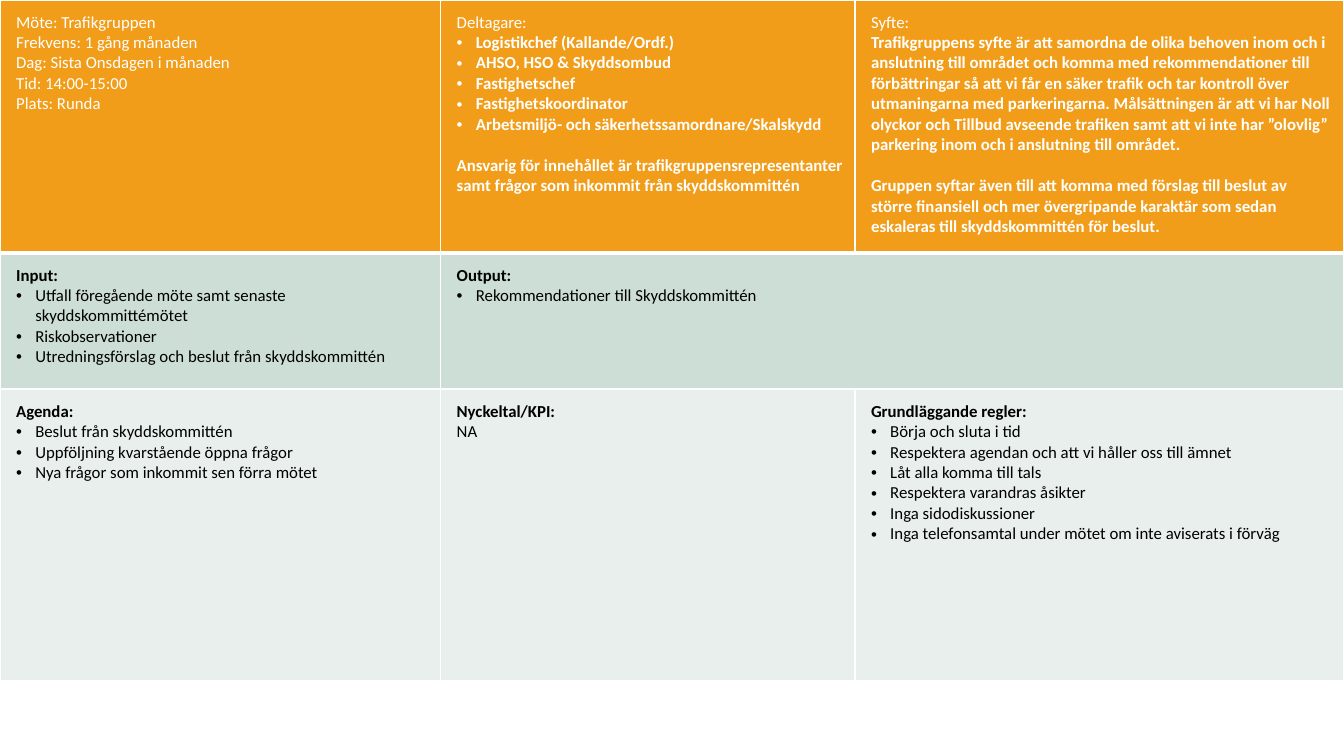
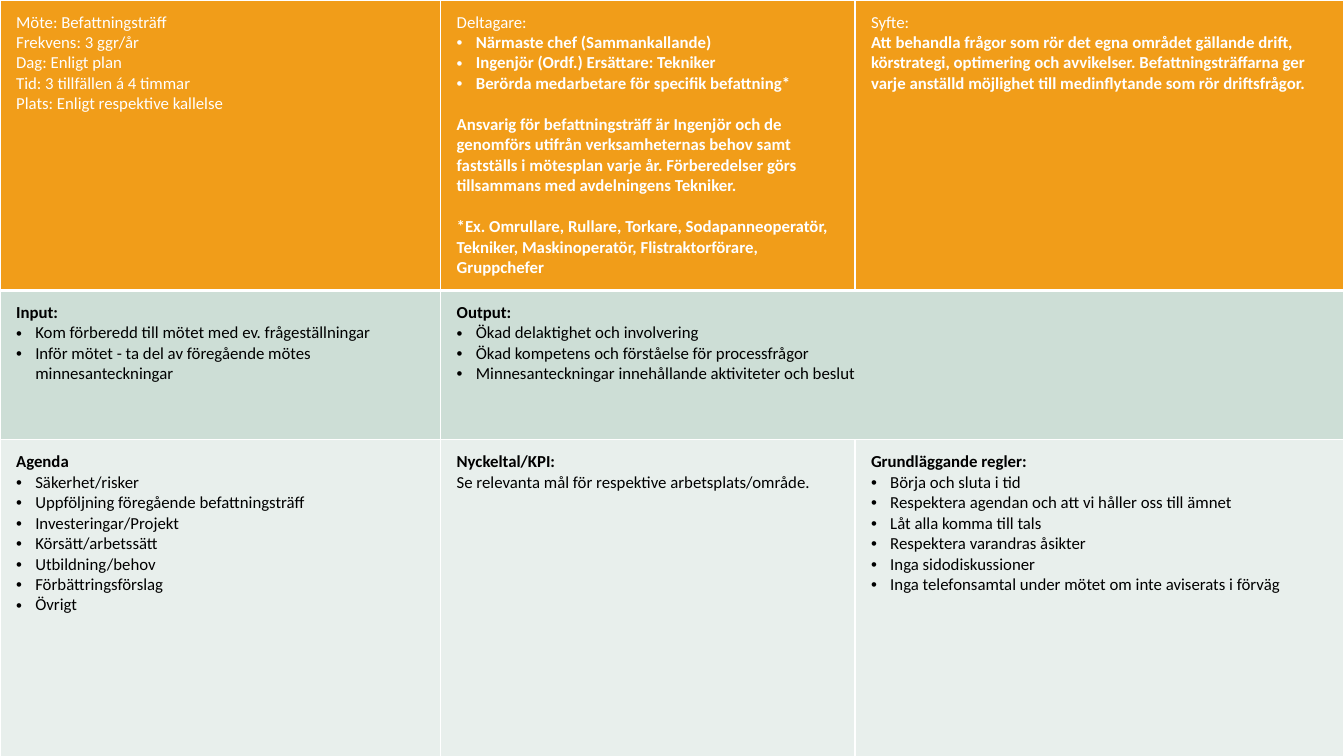
from dataclasses import dataclass

from lxml.etree import SubElement
from pptx import Presentation
from pptx.dml.color import RGBColor
from pptx.oxml.ns import qn
from pptx.util import Inches, Pt


@dataclass(frozen=True)
class Theme:
    font: str = "Calibri"
    size: float = 12
    gap: float = 14.65  # one line of body text
    light: str = "FFFFFF"
    dark: str = "000000"
    row_fills: tuple = ("F19D19", "CDDED6", "E8EFEC")
    border: float = 1
    header_border: float = 3


@dataclass(frozen=True)
class Box:
    heading: str
    bullets: tuple = ()
    paragraphs: tuple = ()


theme = Theme()
COLUMN_WIDTHS = (4.37, 4.11, 4.85)
INDENT = Inches(0.19)

ground_rules = Box("Grundläggande regler:", bullets=(
    "Börja och sluta i tid",
    "Respektera agendan och att vi håller oss till ämnet",
    "Låt alla komma till tals",
    "Respektera varandras åsikter",
    "Inga sidodiskussioner",
    "Inga telefonsamtal under mötet om inte aviserats i förväg",
))

# Each meeting: row heights, then three rows of boxes
meetings = [
    ((2.51, 1.35, 2.89), (
        (
            Box("Möte: Trafikgruppen", paragraphs=(
                "Frekvens: 1 gång månaden",
                "Dag: Sista Onsdagen i månaden",
                "Tid: 14:00-15:00",
                "Plats: Runda",
            )),
            Box("Deltagare:", bullets=(
                "Logistikchef (Kallande/Ordf.)",
                "AHSO, HSO & Skyddsombud",
                "Fastighetschef",
                "Fastighetskoordinator",
                "Arbetsmiljö- och säkerhetssamordnare/Skalskydd",
            ), paragraphs=(
                "Ansvarig för innehållet är trafikgruppensrepresentanter samt "
                "frågor som inkommit från skyddskommittén",
            )),
            Box("Syfte:", paragraphs=(
                "Trafikgruppens syfte är att samordna de olika behoven inom och i "
                "anslutning till området och komma med rekommendationer till "
                "förbättringar så att vi får en säker trafik och tar kontroll över "
                "utmaningarna med parkeringarna. Målsättningen är att vi har Noll "
                "olyckor och Tillbud avseende trafiken samt att vi inte har "
                "”olovlig” parkering inom och i anslutning till området.",
                "Gruppen syftar även till att komma med förslag till beslut av "
                "större finansiell och mer övergripande karaktär som sedan "
                "eskaleras till skyddskommittén för beslut.",
            )),
        ),
        (
            Box("Input:", bullets=(
                "Utfall föregående möte samt senaste skyddskommittémötet",
                "Riskobservationer",
                "Utredningsförslag och beslut från skyddskommittén",
            )),
            Box("Output:", bullets=("Rekommendationer till Skyddskommittén",)),
        ),
        (
            Box("Agenda:", bullets=(
                "Beslut från skyddskommittén",
                "Uppföljning kvarstående öppna frågor",
                "Nya frågor som inkommit sen förra mötet",
            )),
            Box("Nyckeltal/KPI:", paragraphs=("NA",)),
            ground_rules,
        ),
    )),
    ((2.88, 1.48, 3.14), (
        (
            Box("Möte: Befattningsträff", paragraphs=(
                "Frekvens: 3 ggr/år",
                "Dag: Enligt plan",
                "Tid: 3 tillfällen á 4 timmar",
                "Plats: Enligt respektive kallelse",
            )),
            Box("Deltagare:", bullets=(
                "Närmaste chef (Sammankallande)",
                "Ingenjör (Ordf.) Ersättare: Tekniker",
                "Berörda medarbetare för specifik befattning*",
            ), paragraphs=(
                "Ansvarig för befattningsträff är Ingenjör och de genomförs "
                "utifrån verksamheternas behov samt fastställs i mötesplan varje "
                "år. Förberedelser görs tillsammans med avdelningens Tekniker.",
                "*Ex. Omrullare, Rullare, Torkare, Sodapanneoperatör, Tekniker, "
                "Maskinoperatör, Flistraktorförare, Gruppchefer",
            )),
            Box("Syfte:", paragraphs=(
                "Att behandla frågor som rör det egna området gällande drift, "
                "körstrategi, optimering och avvikelser. Befattningsträffarna ger "
                "varje anställd möjlighet till medinflytande som rör driftsfrågor.",
            )),
        ),
        (
            Box("Input:", bullets=(
                "Kom förberedd till mötet med ev. frågeställningar",
                "Inför mötet - ta del av föregående mötes minnesanteckningar",
            )),
            Box("Output:", bullets=(
                "Ökad delaktighet och involvering",
                "Ökad kompetens och förståelse för processfrågor",
                "Minnesanteckningar innehållande aktiviteter och beslut",
            )),
        ),
        (
            Box("Agenda", bullets=(
                "Säkerhet/risker",
                "Uppföljning föregående befattningsträff",
                "Investeringar/Projekt",
                "Körsätt/arbetssätt",
                "Utbildning/behov",
                "Förbättringsförslag",
                "Övrigt",
            )),
            Box("Nyckeltal/KPI:", paragraphs=(
                "Se relevanta mål för respektive arbetsplats/område.",
            )),
            ground_rules,
        ),
    )),
]


def style_cell(cell, row_index):
    """Set margins, white borders and the fill of the row."""
    cell.margin_left = Inches(0.16)
    cell.margin_top = cell.margin_right = cell.margin_bottom = Inches(0.12)
    properties = cell._tc.get_or_add_tcPr()
    for side in ("L", "R", "T", "B"):
        heavy = (row_index, side) in ((0, "B"), (1, "T"))
        width = theme.header_border if heavy else theme.border
        line = SubElement(properties, qn(f"a:ln{side}"), w=str(Pt(width)))
        fill = SubElement(line, qn("a:solidFill"))
        SubElement(fill, qn("a:srgbClr"), val=theme.light)
    cell.fill.solid()
    cell.fill.fore_color.rgb = RGBColor.from_string(theme.row_fills[row_index])


def write_box(cell, box, in_header, bold_body):
    """Write the heading, the bullets and the paragraphs of a box."""
    lines = [box.heading, *box.bullets, *box.paragraphs]
    first_paragraph = 1 + len(box.bullets)
    for index, text in enumerate(lines):
        frame = cell.text_frame
        paragraph = frame.paragraphs[0] if index == 0 else frame.add_paragraph()
        if bold_body and index > 1 and index >= first_paragraph:
            paragraph.space_before = Pt(theme.gap)
        if 0 < index < first_paragraph:
            properties = paragraph._p.get_or_add_pPr()
            properties.set("marL", str(INDENT))
            properties.set("indent", str(-INDENT))
            SubElement(properties, qn("a:buFont"), typeface="Arial")
            SubElement(properties, qn("a:buChar"), char="•")
        run = paragraph.add_run()
        run.text = text
        run.font.name = theme.font
        run.font.size = Pt(theme.size)
        run.font.bold = bold_body if index else not in_header
        color = theme.light if in_header else theme.dark
        run.font.color.rgb = RGBColor.from_string(color)


presentation = Presentation()
presentation.slide_width = Inches(13.33)
presentation.slide_height = Inches(7.5)
blank_layout = presentation.slide_layouts[6]

for row_heights, rows in meetings:
    # Table grid
    slide = presentation.slides.add_slide(blank_layout)
    table = slide.shapes.add_table(
        len(row_heights), len(COLUMN_WIDTHS), 0, 0,
        Inches(sum(COLUMN_WIDTHS)), Inches(sum(row_heights)),
    ).table
    for column, width in zip(table.columns, COLUMN_WIDTHS):
        column.width = Inches(width)
    for row, height in zip(table.rows, row_heights):
        row.height = Inches(height)
    table.cell(1, 1).merge(table.cell(1, 2))

    # Cell styles and text
    for row_index, boxes in enumerate(rows):
        for cell in table.rows[row_index].cells:
            style_cell(cell, row_index)
        for column_index, box in enumerate(boxes):
            in_header = row_index == 0
            write_box(table.cell(row_index, column_index), box,
                      in_header, in_header and column_index > 0)

presentation.save("out.pptx")
